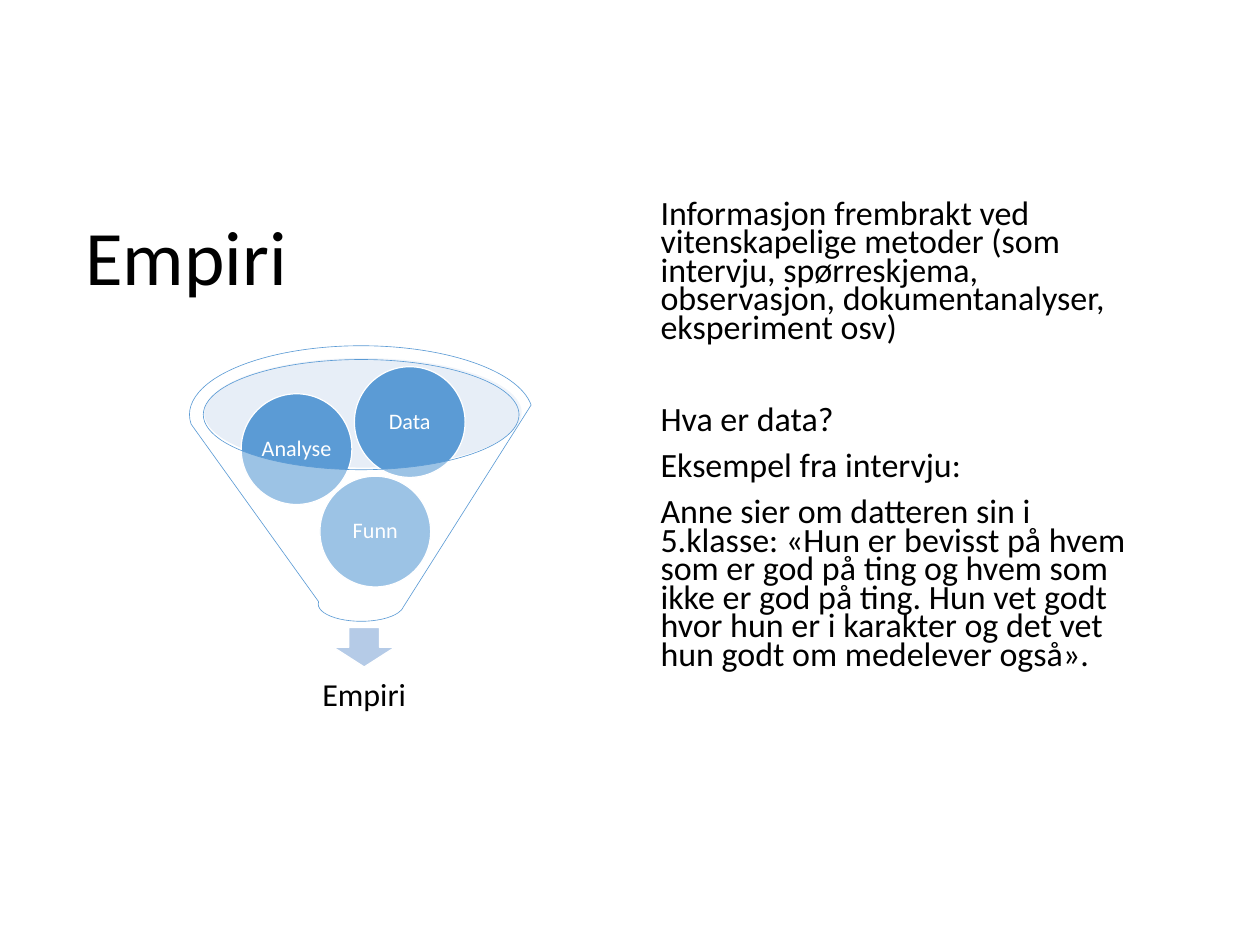
from lxml.etree import SubElement
from pptx import Presentation
from pptx.dml.color import RGBColor
from pptx.enum.shapes import MSO_SHAPE
from pptx.enum.text import MSO_ANCHOR, MSO_AUTO_SIZE, PP_ALIGN
from pptx.oxml.ns import qn
from pptx.util import Pt

FONT = "Calibri"
BLACK = "000000"
WHITE = "FFFFFF"
BLUE = "5B9BD5"
CIRCLE_SIZE = 90
DEFINITION = [
    ("Informasjon frembrakt ved vitenskapelige metoder (som intervju, spørreskjema, "
     "observasjon, dokumentanalyser, eksperiment osv)", 14.2),
    ("Hva er data?", 51.7),
    ("Eksempel fra intervju:", 14.2),
    ("Anne sier om datteren sin i 5.klasse: «Hun er bevisst på hvem som er god på ting "
     "og hvem som ikke er god på ting. Hun vet godt hvor hun er i karakter og det vet "
     "hun godt om medelever også».", 14.2),
]
INGREDIENTS = [("Funn", 106, 106), ("Analyse", 42, 39), ("Data", 134, 17)]


def paint(color_format, color):
    color_format.rgb = RGBColor.from_string(color)


def place(placeholder, box):
    placeholder.left, placeholder.top, placeholder.width, placeholder.height = map(Pt, box)


def style(paragraph, size, color, align, line_spacing=0.9):
    paragraph.alignment = align
    paragraph.line_spacing = line_spacing
    paragraph.font.name = FONT
    paragraph.font.size = Pt(size)
    paint(paragraph.font.color, color)


def write_label(frame, text, size, color, margin, wrap):
    frame.word_wrap = wrap
    frame.vertical_anchor = MSO_ANCHOR.MIDDLE
    frame.margin_left = frame.margin_right = Pt(margin)
    frame.margin_top = frame.margin_bottom = Pt(margin)
    frame.text = text
    style(frame.paragraphs[0], size, color, PP_ALIGN.CENTER)


def add_part(shapes, kind, box, fill, line=None, line_width=1, opacity=100):
    part = shapes.add_shape(kind, *map(Pt, box))
    part.shadow.inherit = False
    part.fill.solid()
    paint(part.fill.fore_color, fill)
    if opacity < 100:
        fill_color = part.fill._xPr.find(qn("a:solidFill"))[0]
        SubElement(fill_color, qn("a:alpha"), val=str(opacity * 1000))
    if line:
        paint(part.line.color, line)
        part.line.width = Pt(line_width)
    else:
        part.line.fill.background()
    return part


def add_title(slide, box):
    title = slide.shapes.title
    place(title, box)
    title.text_frame.text = "Empiri"
    title.text_frame.vertical_anchor = MSO_ANCHOR.MIDDLE
    title.text_frame.auto_size = MSO_AUTO_SIZE.NONE
    style(title.text_frame.paragraphs[0], 62.6, BLACK, PP_ALIGN.LEFT)


def add_definition(slide, box):
    definition = slide.placeholders[1]
    place(definition, box)
    frame = definition.text_frame
    frame.auto_size = MSO_AUTO_SIZE.NONE
    frame.vertical_anchor = MSO_ANCHOR.TOP
    frame.text = "\n".join(text for text, _ in DEFINITION)
    for paragraph, (_, space_before) in zip(frame.paragraphs, DEFINITION):
        style(paragraph, 27.6, BLACK, PP_ALIGN.LEFT, 0.7)
        paragraph.space_before = Pt(space_before)
        properties = paragraph._p.get_or_add_pPr()
        properties.set("marL", str(Pt(3.6)))
        properties.set("indent", "0")
        SubElement(properties, qn("a:buNone"))
        properties.append(properties.find(qn("a:defRPr")))


def add_funnel(slide, box):
    left, top, width, height = box
    shapes = slide.shapes.add_group_shape().shapes
    add_part(shapes, MSO_SHAPE.OVAL, (left + 12, top + 10, width - 21, 89),
             "C4D5EB", opacity=40)
    add_part(shapes, MSO_SHAPE.DOWN_ARROW, (left + 117, top + 229, 50, 32),
             "B5CBE7", WHITE)
    result = shapes.add_textbox(*map(Pt, (left + 22, top + height - 60, 240, 60)))
    write_label(result.text_frame, "Empiri", 26, BLACK, 14.4, True)
    for text, x, y in INGREDIENTS:
        circle = add_part(shapes, MSO_SHAPE.OVAL,
                          (left + x, top + y, CIRCLE_SIZE, CIRCLE_SIZE), BLUE, WHITE)
        write_label(circle.text_frame, text, 18, WHITE, 2, False)
    add_part(shapes, MSO_SHAPE.FUNNEL, (left, top, width, 224),
             WHITE, BLUE, 0.5, opacity=40)


def main():
    presentation = Presentation()
    presentation.slide_width = Pt(1024)
    presentation.slide_height = Pt(768)
    slide = presentation.slides.add_slide(presentation.slide_layouts[1])
    add_title(slide, (62, 155, 829, 114))
    add_funnel(slide, (154, 281, 279, 315))
    add_definition(slide, (526, 161, 400, 446))
    presentation.save("out.pptx")


if __name__ == "__main__":
    main()
